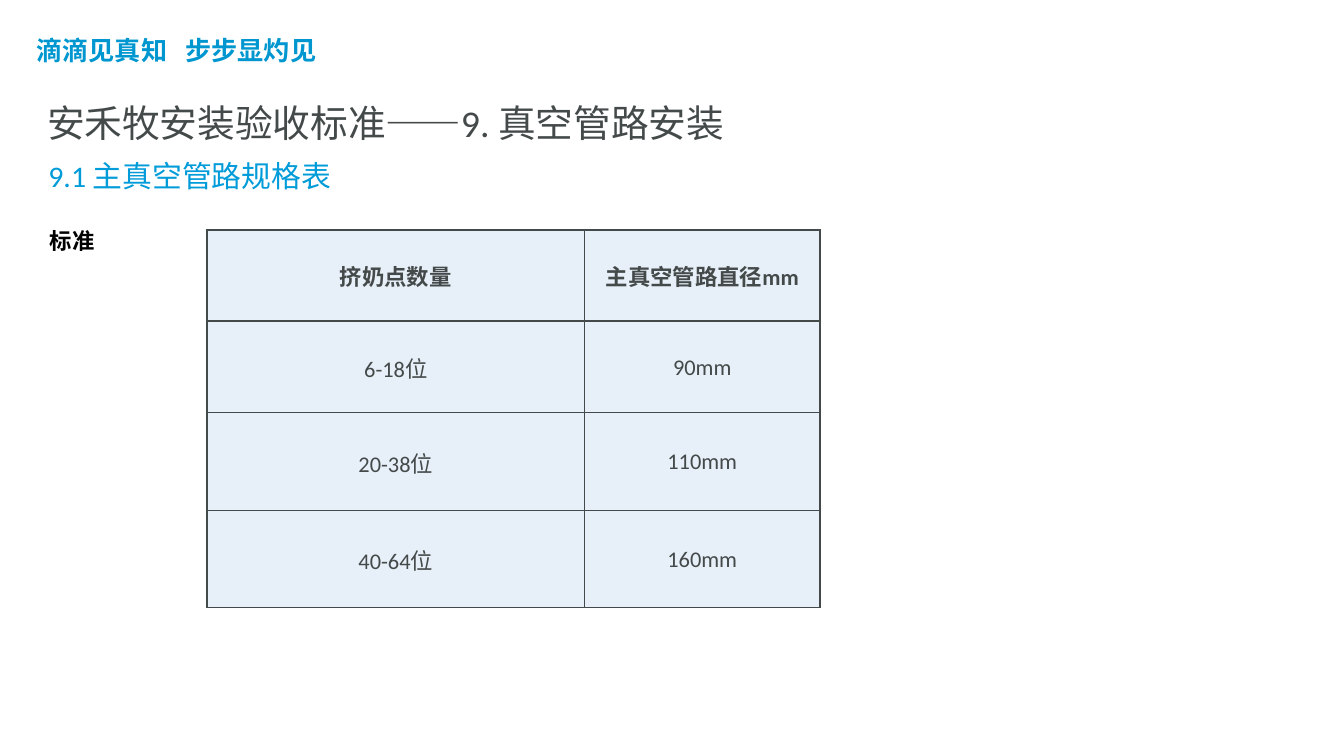
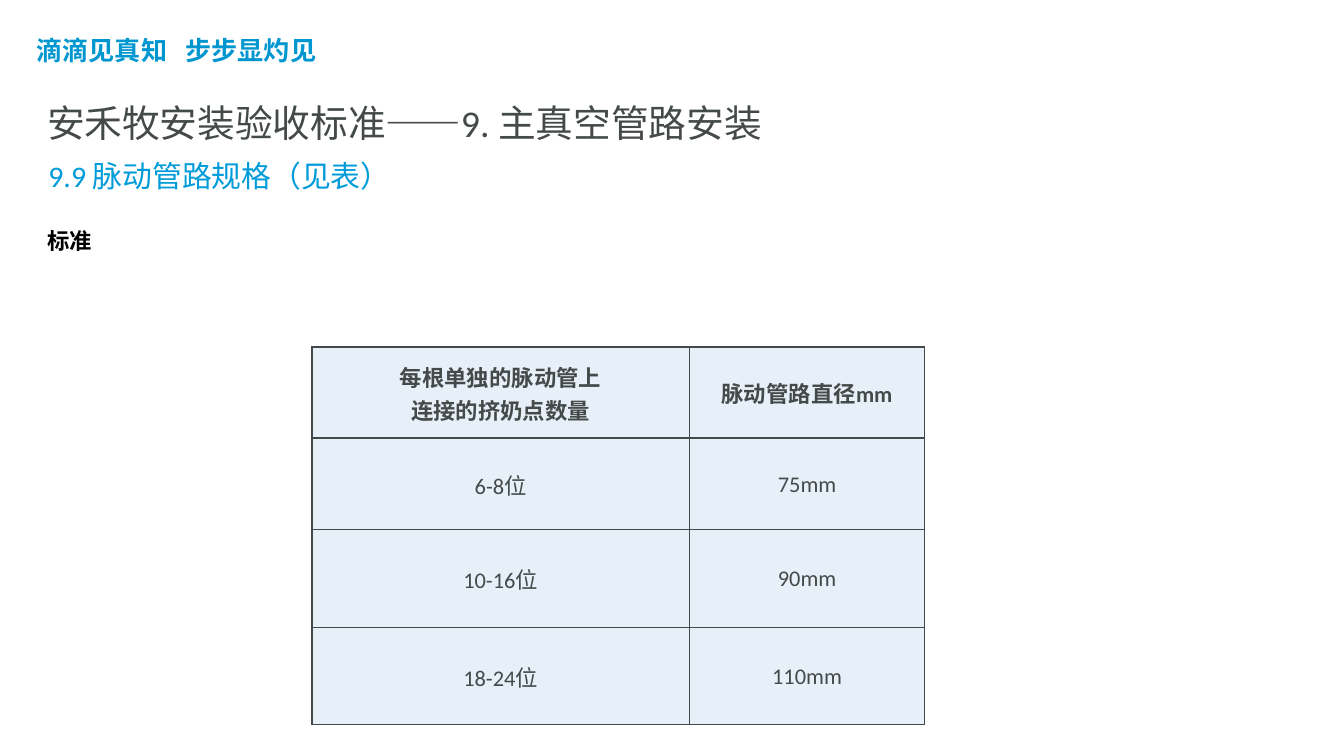
from lxml.etree import SubElement, fromstring
from pptx import Presentation
from pptx.dml.color import RGBColor
from pptx.enum.text import MSO_ANCHOR, MSO_AUTO_SIZE, PP_ALIGN
from pptx.oxml.ns import nsdecls, qn
from pptx.util import Inches, Pt

COLORS = {
    "slogan": "0097D0",
    "title": "444949",
    "subtitle": "009BD9",
    "label": "000000",
    "cell": "E7EFF8",
}
LATIN, CHINESE = "Calibri", "Noto Sans CJK SC"
SLOGAN = ("滴滴见真知", "\t步步显灼见")
COLUMN_WIDTHS = (2.81, 1.75)
ROW_HEIGHTS = (0.68, 0.68, 0.73, 0.72)

PAGES = [
    {
        "title": "安禾牧安装验收标准——9. 真空管路安装",
        "subtitle": "9.1 主真空管路规格表",
        "label_left": 0.3,
        "table_at": (1.54, 1.71),
        "rows": [("挤奶点数量", "主真空管路直径mm"), ("6-18位", "90mm"),
                 ("20-38位", "110mm"), ("40-64位", "160mm")],
    },
    {
        "title": "安禾牧安装验收标准——9. 主真空管路安装",
        "subtitle": "9.9 脉动管路规格（见表）",
        "label_left": 0.28,
        "table_at": (2.32, 2.58),
        "rows": [("每根单独的脉动管上\n连接的挤奶点数量", "脉动管路直径mm"), ("6-8位", "75mm"),
                 ("10-16位", "90mm"), ("18-24位", "110mm")],
    },
]


def add_span(para, text, size, color, bold=False, latin=LATIN):
    span = para.add_run()
    span.text = text
    font = span.font
    font.name, font.size, font.bold = latin, Pt(size), bold
    font.color.rgb = RGBColor.from_string(COLORS[color])
    SubElement(font._element, qn("a:ea"), typeface=CHINESE)
    return span


def prepare_box(box, area, anchor=MSO_ANCHOR.TOP):
    """Place a text shape and return its first paragraph."""
    box.left, box.top, box.width, box.height = map(Inches, area)
    frame = box.text_frame
    frame.word_wrap = True
    frame.auto_size = MSO_AUTO_SIZE.NONE
    frame.vertical_anchor = anchor
    frame.margin_left = frame.margin_right = Inches(0.07)
    frame.margin_top = frame.margin_bottom = Inches(0.04)
    para = frame.paragraphs[0]
    para.alignment = PP_ALIGN.LEFT
    para.space_before = Pt(0)
    return para


def remove_bullet(para):
    properties = para._p.get_or_add_pPr()
    properties.set("marL", "0")
    properties.set("indent", "0")
    SubElement(properties, qn("a:buNone"))


def add_slogan(page, area):
    box = page.shapes.add_textbox(0, 0, 0, 0)
    para = prepare_box(box, area, MSO_ANCHOR.MIDDLE)
    tabs = SubElement(para._p.get_or_add_pPr(), qn("a:tabLst"))
    SubElement(tabs, qn("a:tab"), pos=str(Inches(1.11)), algn="l")
    for text in SLOGAN:
        add_span(para, text, 14, "slogan", bold=True, latin=CHINESE)


def add_headings(page, content):
    title, label, subtitle = page.placeholders

    para = prepare_box(title, (0.28, 0.63, 9.45, 0.47))
    span = add_span(para, content["title"], 25.2, "title")
    span.font._element.set("cap", "small")

    para = prepare_box(label, (content["label_left"], 1.55, 9.45, 3.54))
    remove_bullet(para)
    para.line_spacing = 1.5
    add_span(para, "标准", 12, "label", bold=True)

    para = prepare_box(subtitle, (0.29, 1.1, 9.44, 0.35))
    remove_bullet(para)
    para.line_spacing = Pt(21.8)
    add_span(para, content["subtitle"], 16, "subtitle")


def style_cell(cell):
    cell.fill.solid()
    cell.fill.fore_color.rgb = RGBColor.from_string(COLORS["cell"])
    cell.vertical_anchor = MSO_ANCHOR.MIDDLE
    cell.margin_left = cell.margin_right = cell.margin_top = Inches(0.01)
    cell.margin_bottom = 0
    # Borders come before the fill in the cell properties
    for index, side in enumerate("LRTB"):
        border = fromstring(
            f'<a:ln{side} {nsdecls("a")} w="{Pt(1)}"><a:solidFill>'
            f'<a:srgbClr val="{COLORS["title"]}"/></a:solidFill></a:ln{side}>')
        cell._tc.get_or_add_tcPr().insert(index, border)


def add_pipe_table(page, position, rows):
    left, top = map(Inches, position)
    table = page.shapes.add_table(
        len(rows), len(COLUMN_WIDTHS), left, top,
        Inches(sum(COLUMN_WIDTHS)), Inches(sum(ROW_HEIGHTS))).table
    table.first_row = table.horz_banding = False
    for column, width in zip(table.columns, COLUMN_WIDTHS):
        column.width = Inches(width)
    for row, height in zip(table.rows, ROW_HEIGHTS):
        row.height = Inches(height)

    for row_index, texts in enumerate(rows):
        for column_index, text in enumerate(texts):
            cell = table.cell(row_index, column_index)
            style_cell(cell)
            frame = cell.text_frame
            for line_index, line in enumerate(text.split("\n")):
                para = frame.add_paragraph() if line_index else frame.paragraphs[0]
                para.alignment = PP_ALIGN.CENTER
                add_span(para, line, 12, "title", bold=row_index == 0)


def build_page(deck, content):
    page = deck.slides.add_slide(deck.slide_layouts.get_by_name("Two Content"))
    add_slogan(page, (0.2, 0.14, 7.72, 0.47))
    add_headings(page, content)
    add_pipe_table(page, content["table_at"], content["rows"])


def main():
    deck = Presentation()
    # Widescreen, 16:9
    deck.slide_width = Inches(10)
    deck.slide_height = deck.slide_width * 9 // 16
    for content in PAGES:
        build_page(deck, content)
    deck.save("out.pptx")


if __name__ == "__main__":
    main()
